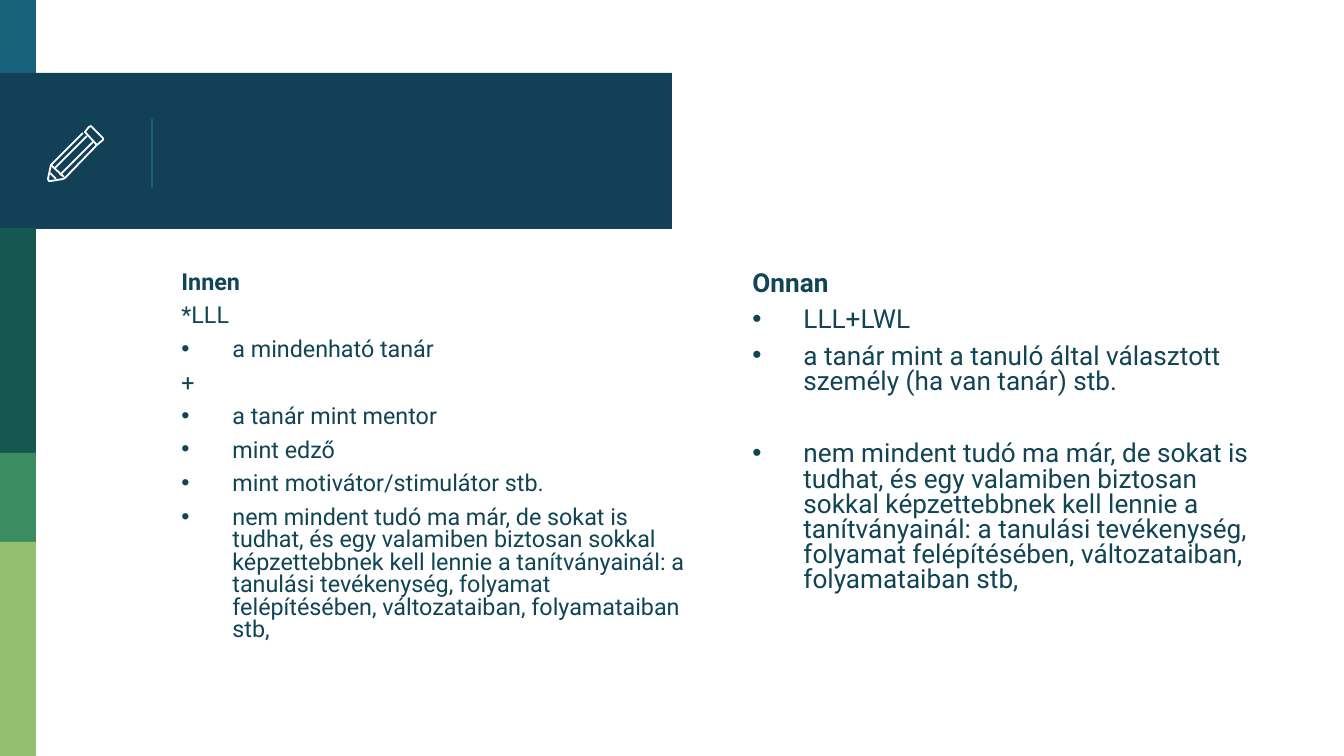
from lxml.etree import SubElement
from pptx import Presentation
from pptx.dml.color import RGBColor
from pptx.enum.shapes import MSO_CONNECTOR as CONN, MSO_SHAPE as SHAPE
from pptx.enum.text import MSO_ANCHOR as ANCHOR, MSO_AUTO_SIZE as AUTO, PP_ALIGN as ALIGN
from pptx.oxml.ns import qn
from pptx.util import Inches, Pt

SCALE = 914400 / 134.4
FONT, INK, WHITE, TEAL, NAVY = "Roboto", "114454", "FFFFFF", "18637B", "124057"
BULLET_INDENT = 51
GAP, WIDE_GAP = 6, 25.5

SIDEBAR_W = 36
SIDEBAR = [(0, 78, TEAL), (228, 453, "165751"), (453, 542, "3B8D61"), (542, 756, "94BF6E")]
BAND = (0, 73, 672, 156)
DIVIDER = (152, 119, 152, 188)

CLOSING = ("nem mindent tudó ma már, de sokat is tudhat, és egy valamiben biztosan "
           "sokkal képzettebbnek kell lennie a tanítványainál: a tanulási tevékenység, "
           "folyamat felépítésében, változataiban, folyamataiban stb,")
# Each paragraph: text, bulleted, space before in points
COLUMNS = [
    {"box": (168, 259, 538, 464), "size": 12.5, "heading": "Innen", "items": [
        ("*LLL", False, GAP),
        ("a mindenható tanár", True, GAP),
        ("+", False, GAP),
        ("a tanár mint mentor", True, GAP),
        ("mint edző", True, GAP),
        ("mint motivátor/stimulátor stb.", True, GAP),
        (CLOSING, True, GAP)]},
    {"box": (739, 259, 538, 474), "size": 14, "heading": "Onnan", "items": [
        ("LLL+LWL", True, GAP),
        ("a tanár mint a tanuló által választott személy (ha van tanár) stb.", True, GAP),
        (CLOSING, True, WIDE_GAP)]},
]

# Each stroke: points, closed
PENCIL = [
    ([(103, 138), (92, 127), (91, 126), (89, 127), (85, 132), (97, 145), (103, 140)], True),
    ([(93, 142), (60, 175)], False),
    ([(83, 133), (51, 165), (48, 179), (49, 181), (51, 181), (63, 179), (65, 178),
      (97, 145)], False),
    ([(55, 168), (87, 136)], False),
    ([(56, 179), (50, 173)], False),
    ([(51, 165), (64, 177)], False),
]


def px(*values):
    """Turn pixel lengths into EMU."""
    return [round(v * SCALE) for v in values]


def rgb(code):
    return RGBColor.from_string(code)


def add_rect(shapes, box, color):
    sp = shapes.add_shape(SHAPE.RECTANGLE, *px(*box))
    sp.shadow.inherit = False
    sp.fill.solid()
    sp.fill.fore_color.rgb = rgb(color)
    sp.line.fill.background()


def add_divider(shapes):
    line = shapes.add_connector(CONN.STRAIGHT, *px(*DIVIDER))
    line.line.color.rgb = rgb(TEAL)
    line.line.width = Pt(0.75)
    SubElement(line._element.spPr, qn("a:effectLst"))


def set_bullet(p, bulleted):
    pPr = p._p.get_or_add_pPr()
    indent = px(BULLET_INDENT)[0] if bulleted else 0
    pPr.set("marL", str(indent))
    pPr.set("indent", str(-indent))
    if bulleted:
        SubElement(SubElement(pPr, qn("a:buClr")), qn("a:srgbClr"), val=INK)
        SubElement(pPr, qn("a:buFont"), typeface="Arial")
        SubElement(pPr, qn("a:buChar"), char="•")
    else:
        SubElement(pPr, qn("a:buNone"))


def fill_column(sp, column):
    sp.left, sp.top, sp.width, sp.height = px(*column["box"])
    tf = sp.text_frame
    tf.word_wrap = True
    tf.auto_size = AUTO.NONE
    tf.vertical_anchor = ANCHOR.TOP
    tf.margin_left = tf.margin_top = tf.margin_right = tf.margin_bottom = Inches(0.1)
    paragraphs = [(column["heading"], False, GAP)] + column["items"]
    for i, (text, bulleted, before) in enumerate(paragraphs):
        p = tf.add_paragraph() if i else tf.paragraphs[0]
        p.alignment = ALIGN.LEFT
        p.line_spacing = 0.8
        p.space_before, p.space_after = Pt(before), Pt(0)
        set_bullet(p, bulleted)
        r = p.add_run()
        r.text = text
        r.font.name, r.font.size, r.font.bold = FONT, Pt(column["size"]), i == 0
        r.font.color.rgb = rgb(INK)


def add_pencil(shapes):
    group = shapes.add_group_shape()
    for points, closed in PENCIL:
        builder = group.shapes.build_freeform(*points[0], scale=SCALE)
        builder.add_line_segments(points[1:], close=closed)
        sp = builder.convert_to_shape()
        sp.shadow.inherit = False
        sp.fill.background()
        sp.line.color.rgb = rgb(WHITE)
        sp.line.width = Pt(0.96)


def main():
    prs = Presentation()
    prs.slide_width, prs.slide_height = px(1344, 756)
    slide = prs.slides.add_slide(prs.slide_layouts[3])
    shapes = slide.shapes
    title = shapes.title._element
    title.getparent().remove(title)

    for i, (top, bottom, color) in enumerate(SIDEBAR):
        add_rect(shapes, (0, top, SIDEBAR_W, bottom - top), color)
        if i == 0:
            add_rect(shapes, BAND, NAVY)
    add_divider(shapes)
    for sp, column in zip(list(slide.placeholders), COLUMNS):
        fill_column(sp, column)
    add_pencil(shapes)
    prs.save("out.pptx")


if __name__ == "__main__":
    main()
